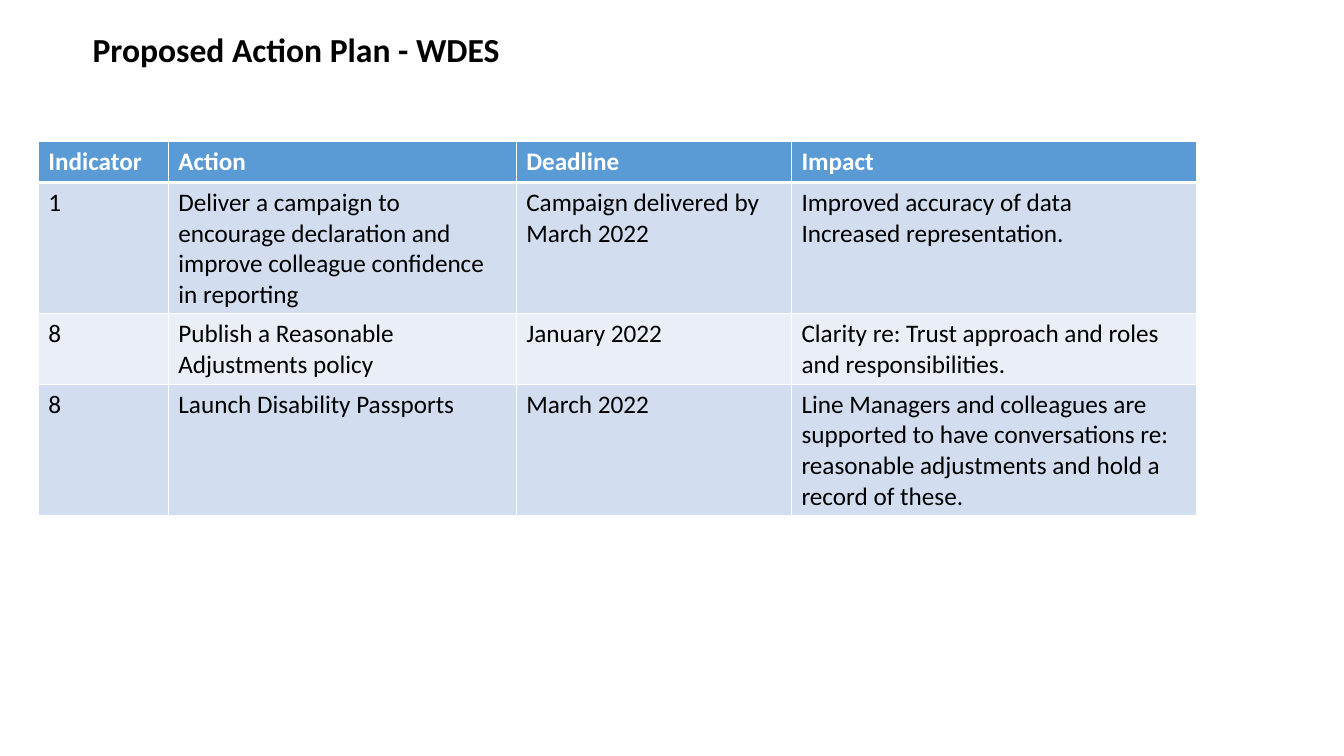
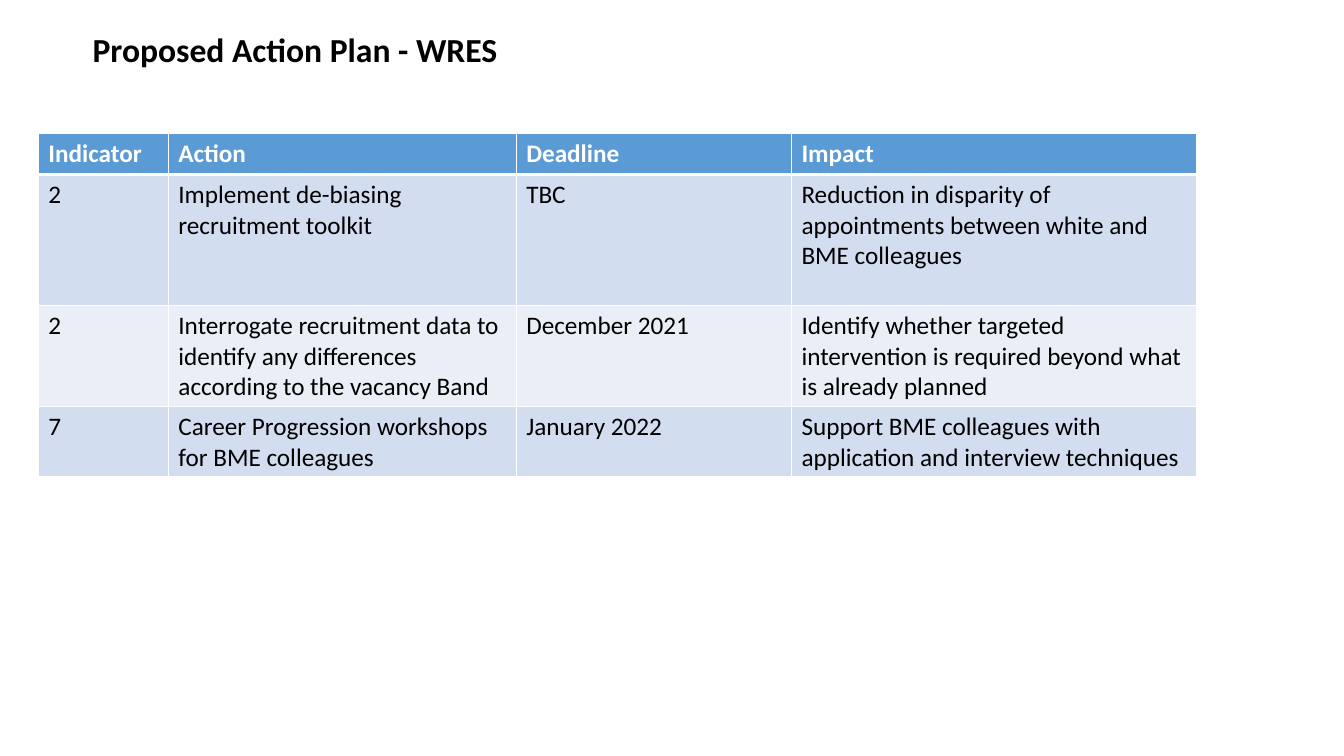
from dataclasses import dataclass

from lxml import etree
from pptx import Presentation
from pptx.dml.color import RGBColor
from pptx.enum.text import MSO_AUTO_SIZE
from pptx.oxml.ns import qn
from pptx.util import Inches, Pt

FIT_SHAPE = MSO_AUTO_SIZE.SHAPE_TO_FIT_TEXT
BLANK_LAYOUT = 6


@dataclass(frozen=True)
class Theme:
    """Colours, font and type sizes shared by the slides."""

    font: str = "Calibri"
    title_size: int = 24
    body_size: int = 18
    text: str = "000000"
    white: str = "FFFFFF"
    header: str = "5B9BD5"
    bands: tuple = ("D2DEEF", "EAEFF7")
    thin_line: int = 1
    header_line: int = 3


THEME = Theme()
TITLE_BOX = (0.82, 0.24, 7.98, 0.5)
TABLE_LEFT = 0.38
COLUMN_WIDTHS = (1.29, 3.45, 2.73, 4.02)
HEADER_HEIGHT = 0.41
HEADINGS = ("Indicator", "Action", "Deadline", "Impact")

PLANS = (
    {
        "title": "Proposed Action Plan - WDES",
        "top": 1.4,
        "heights": (1.3, 0.7, 1.3),
        "actions": (
            ("1",
             "Deliver a campaign to encourage declaration and improve "
             "colleague confidence in reporting",
             "Campaign delivered by March 2022",
             "Improved accuracy of data\nIncreased representation."),
            ("8",
             "Publish a Reasonable Adjustments policy",
             "January 2022",
             "Clarity re: Trust approach and roles and responsibilities."),
            ("8",
             "Launch Disability Passports",
             "March 2022",
             "Line Managers and colleagues are supported to have conversations "
             "re: reasonable adjustments and hold a record of these."),
        ),
    },
    {
        "title": "Proposed Action Plan - WRES",
        "top": 1.32,
        "heights": (1.3, 1.0, 0.7),
        "actions": (
            ("2",
             "Implement de-biasing recruitment toolkit",
             "TBC",
             "Reduction in disparity of appointments between white and BME "
             "colleagues"),
            ("2",
             "Interrogate recruitment data to identify any differences "
             "according to the vacancy Band",
             "December 2021",
             "Identify whether targeted intervention is required beyond what "
             "is already planned"),
            ("7",
             "Career Progression workshops for BME colleagues",
             "January 2022",
             "Support BME colleagues with application and interview techniques"),
        ),
    },
)


def write_text(text_frame, text, size, color, bold):
    """Write each line of text as a paragraph with one styled run."""
    for index, line in enumerate(text.split("\n")):
        paragraph = text_frame.add_paragraph() if index else text_frame.paragraphs[0]
        run = paragraph.add_run()
        run.text = line
        run.font.name = THEME.font
        run.font.size = Pt(size)
        run.font.bold = bold
        run.font.color.rgb = RGBColor.from_string(color)


def set_borders(cell, top, bottom):
    """Draw white borders around a cell, with widths in points."""
    properties = cell._tc.get_or_add_tcPr()
    widths = {"lnL": THEME.thin_line, "lnR": THEME.thin_line, "lnT": top, "lnB": bottom}
    for side, width in widths.items():
        line = etree.SubElement(properties, qn(f"a:{side}"), w=str(Pt(width)))
        fill = etree.SubElement(line, qn("a:solidFill"))
        etree.SubElement(fill, qn("a:srgbClr"), val=THEME.white)


def style_cell(cell, text, row_index):
    """Fill one cell with its text, band colour and borders."""
    is_header = row_index == 0
    set_borders(
        cell,
        top=THEME.header_line if row_index == 1 else THEME.thin_line,
        bottom=THEME.header_line if is_header else THEME.thin_line,
    )
    fill_color = THEME.header if is_header else THEME.bands[(row_index - 1) % 2]
    cell.fill.solid()
    cell.fill.fore_color.rgb = RGBColor.from_string(fill_color)
    text_color = THEME.white if is_header else THEME.text
    write_text(cell.text_frame, text, THEME.body_size, text_color, is_header)


def add_title(slide, title, box):
    """Place the slide title in the given box."""
    shape = slide.shapes.add_textbox(*map(Inches, box))
    shape.text_frame.word_wrap = True
    shape.text_frame.auto_size = FIT_SHAPE
    write_text(shape.text_frame, title, THEME.title_size, THEME.text, True)


def add_action_table(slide, actions, heights, left, top):
    """Place the action table with its top left corner at the given point."""
    rows = (HEADINGS, *actions)
    row_heights = (HEADER_HEIGHT, *heights)
    box = (left, top, sum(COLUMN_WIDTHS), sum(row_heights))
    table = slide.shapes.add_table(
        len(rows), len(HEADINGS), *map(Inches, box)
    ).table
    table.horz_banding = False
    for column, width in zip(table.columns, COLUMN_WIDTHS):
        column.width = Inches(width)
    for row_index, (texts, height) in enumerate(zip(rows, row_heights)):
        table.rows[row_index].height = Inches(height)
        for column_index, text in enumerate(texts):
            style_cell(table.cell(row_index, column_index), text, row_index)


def add_plan_slide(presentation, plan):
    """Add one action plan slide."""
    slide = presentation.slides.add_slide(presentation.slide_layouts[BLANK_LAYOUT])
    add_title(slide, plan["title"], TITLE_BOX)
    add_action_table(slide, plan["actions"], plan["heights"], TABLE_LEFT, plan["top"])


def main():
    """Build and save the presentation."""
    presentation = Presentation()
    presentation.slide_width = Inches(13.33)
    presentation.slide_height = Inches(7.5)
    for plan in PLANS:
        add_plan_slide(presentation, plan)
    presentation.save("out.pptx")


if __name__ == "__main__":
    main()
